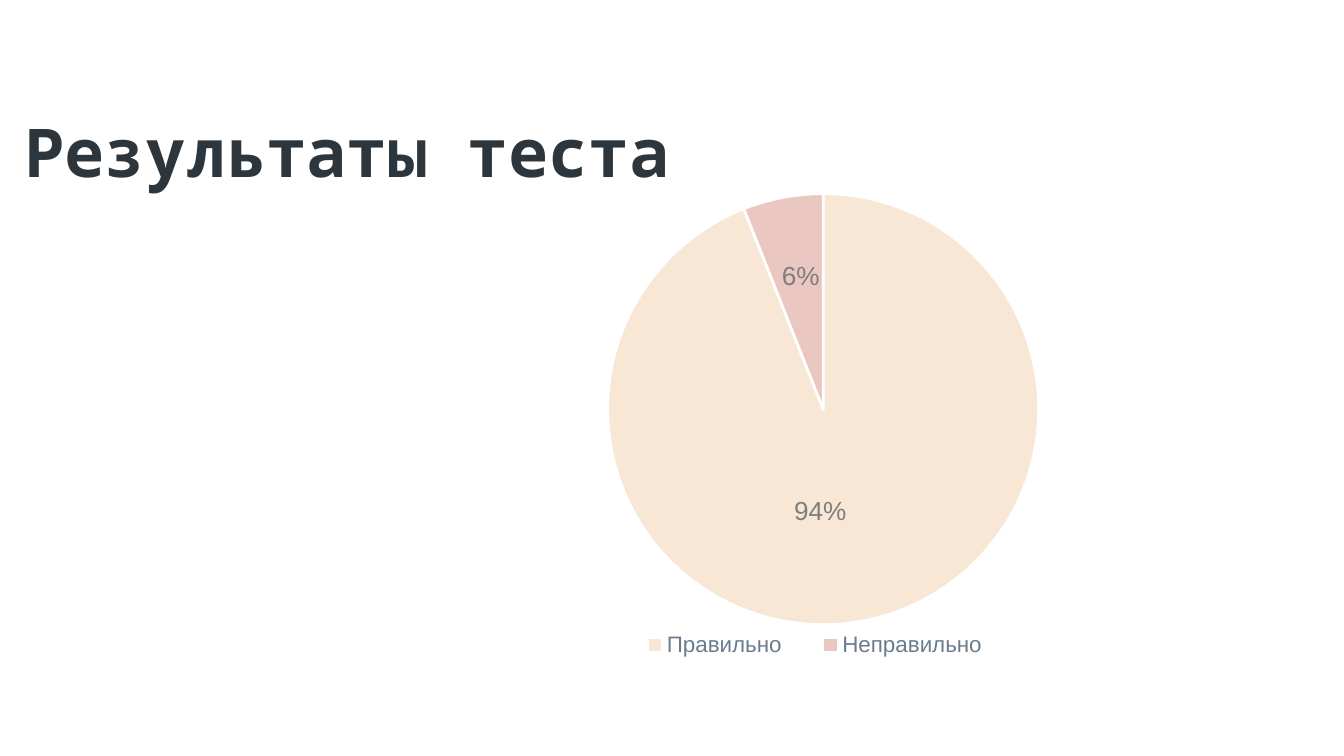
from lxml import etree
from pptx import Presentation
from pptx.chart.data import CategoryChartData
from pptx.dml.color import RGBColor
from pptx.enum.chart import XL_CHART_TYPE as ChartType, XL_LEGEND_POSITION as LegendPosition
from pptx.enum.text import MSO_ANCHOR as Anchor, PP_ALIGN as Align
from pptx.oxml.ns import qn
from pptx.util import Pt

WIDTH, HEIGHT = Pt(720), Pt(405)
DARK = RGBColor(0x2E, 0x36, 0x3D)
SLATE = RGBColor(0x6B, 0x7D, 0x8D)
GREY = RGBColor(0x7E, 0x7E, 0x7E)
WHITE = RGBColor(0xFF, 0xFF, 0xFF)
CREAM = RGBColor(0xF8, 0xE7, 0xD5)
PINK = RGBColor(0xEB, 0xC7, 0xC1)

RESULTS = [("Правильно", 94, CREAM), ("Неправильно", 6, PINK)]


def place(left, top, width, height):
    """Turn percentages of the slide into lengths."""
    return [round(share * side / 100) for share, side in
            zip((left, top, width, height), (WIDTH, HEIGHT, WIDTH, HEIGHT))]


def style(font, name, size, color, bold=False):
    font.name, font.size, font.bold = name, Pt(size), bold
    font.color.rgb = color


def add_text(page, area, text, name, size, color, bold=False):
    box = page.shapes.add_textbox(*place(*area))
    frame = box.text_frame
    frame.text = text
    frame.word_wrap = True
    style(frame.paragraphs[0].runs[0].font, name, size, color, bold)
    return frame


def add_title(page, text):
    frame = add_text(page, (-4.1, 15.5, 53.9, 12.6), text, "Noto Sans Mono", 36, DARK, True)
    frame.margin_left = frame.margin_right = frame.margin_top = frame.margin_bottom = 0
    frame.vertical_anchor = Anchor.TOP
    para = frame.paragraphs[0]
    para.alignment = Align.RIGHT
    para.line_spacing = 0.93


def fix_layout(element, position, modes, **shares):
    """Place a part of the chart, given as shares of the chart's size."""
    for old in element.findall(qn("c:layout")):
        element.remove(old)
    layout = etree.Element(qn("c:layout"))
    manual = etree.SubElement(layout, qn("c:manualLayout"))
    for tag, value in {**modes, **shares}.items():
        etree.SubElement(manual, qn(f"c:{tag}")).set("val", str(value))
    element.insert(position, layout)


def add_pie(page, area, results):
    data = CategoryChartData()
    data.categories = [name for name, _, _ in results]
    data.add_series("Series 1", [value for _, value, _ in results])
    chart = page.shapes.add_chart(ChartType.PIE, *place(*area), data).chart
    chart.has_title = False
    style(chart.font, "Arial", 10, DARK)
    chart.has_legend = True
    chart.legend.position = LegendPosition.BOTTOM
    chart.legend.include_in_layout = False
    style(chart.legend.font, "Arial", 12, SLATE)
    plot = chart.plots[0]
    plot.vary_by_categories = True
    for index, (_, _, color) in enumerate(results):
        slice_format = plot.series[0].points[index].format
        slice_format.fill.solid()
        slice_format.fill.fore_color.rgb = color
        slice_format.line.color.rgb = WHITE
        slice_format.line.width = Pt(1.5)
    parts = chart._chartSpace.chart
    edges = {"xMode": "edge", "yMode": "edge"}
    fix_layout(parts.plotArea, 0, {"layoutTarget": "inner", **edges}, x=0.23, y=0.04, w=0.54, h=0.84)
    fix_layout(parts.find(qn("c:legend")), 1, edges, x=0.24, y=0.88, w=0.5, h=0.08)


def main():
    deck = Presentation()
    deck.slide_width, deck.slide_height = WIDTH, HEIGHT
    page = deck.slides.add_slide(deck.slide_layouts[6])
    add_title(page, "Результаты теста")
    add_pie(page, (31.3, 22.9, 59.9, 67.9), RESULTS)
    for area, text in [((58.1, 64.5, 6.3, 6), "94%"), ((57.2, 33.4, 5.6, 6), "6%")]:
        add_text(page, area, text, "Arial", 14, GREY)
    deck.save("out.pptx")


if __name__ == "__main__":
    main()
